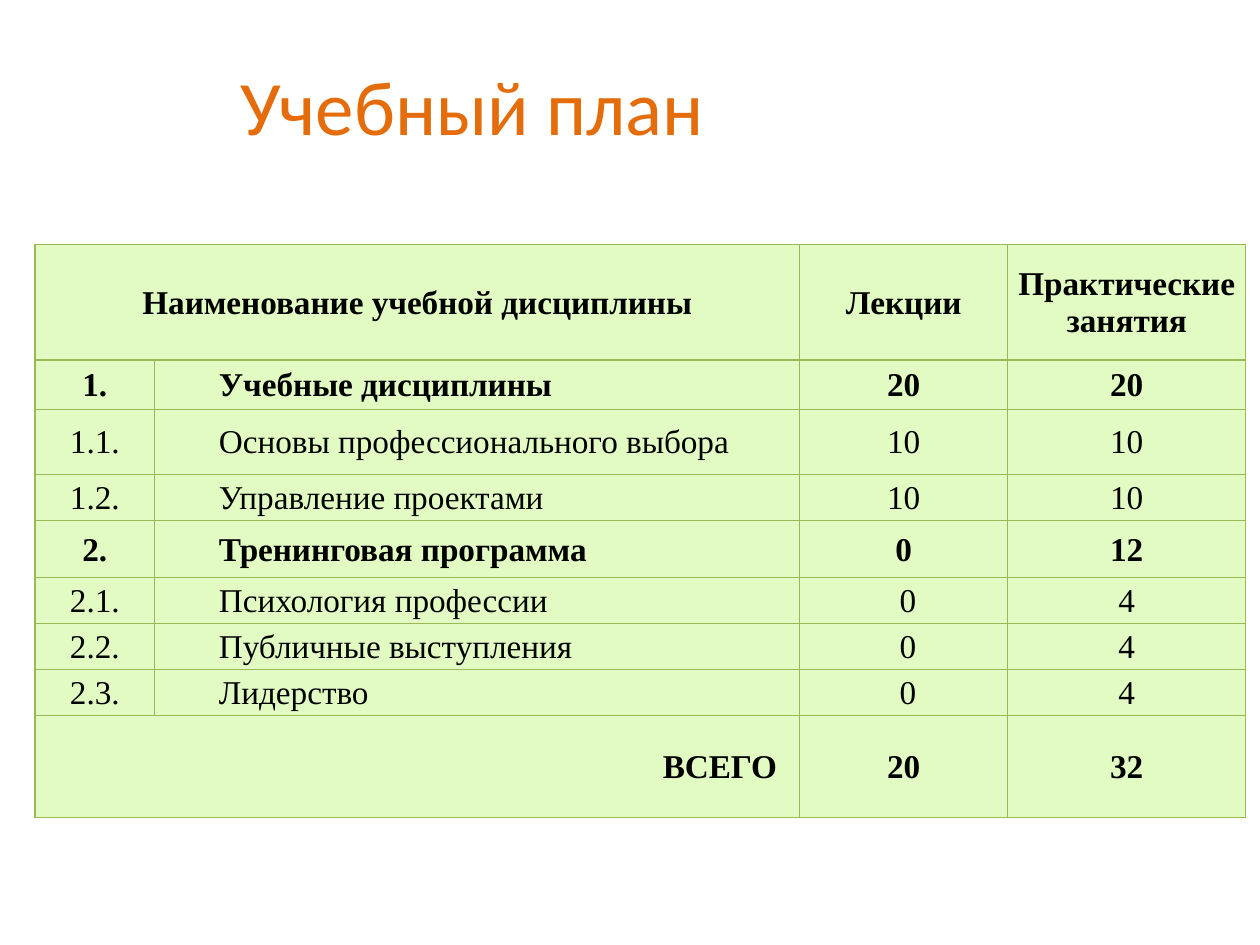
from dataclasses import dataclass

from lxml import etree
from pptx import Presentation
from pptx.dml.color import RGBColor
from pptx.enum.text import MSO_ANCHOR, PP_ALIGN
from pptx.oxml.ns import qn
from pptx.table import _Cell
from pptx.util import Pt

CENTER, LEFT, RIGHT = PP_ALIGN.CENTER, PP_ALIGN.LEFT, PP_ALIGN.RIGHT
MIDDLE = MSO_ANCHOR.MIDDLE

ORANGE = RGBColor(0xE4, 0x6C, 0x0A)
BLACK = RGBColor(0x00, 0x00, 0x00)
PALE_GREEN = RGBColor(0xE2, 0xFB, 0xC3)
BORDER_GREEN = RGBColor(0x98, 0xB9, 0x55)

COLUMN_WIDTHS = (68.4, 368.6, 118.8, 136.1)
NAME_INDENT = 36
TOTAL_RIGHT_MARGIN = 13
CELL_FORMAT = {
    "vertical_anchor": MIDDLE,
    "margin_left": Pt(0.7),
    "margin_top": Pt(0.7),
    "margin_right": Pt(0.7),
    "margin_bottom": Pt(0),
}


@dataclass(frozen=True)
class PlanRow:
    """A row without a name spans its label over the first two columns."""
    height: float
    label: str
    name: str
    lectures: str
    practice: str
    bold: bool = False
    label_alignment: PP_ALIGN = CENTER


PLAN = (
    PlanRow(66, "Наименование учебной дисциплины", "", "Лекции",
            "Практические занятия", bold=True),
    PlanRow(28.4, "1.", "Учебные дисциплины", "20", "20", bold=True),
    PlanRow(37.2, "1.1.", "Основы профессионального выбора", "10", "10"),
    PlanRow(26.2, "1.2.", "Управление проектами", "10", "10"),
    PlanRow(32.8, "2.", "Тренинговая программа", "0", "12", bold=True),
    PlanRow(26.2, "2.1.", "Психология профессии", " 0", "4"),
    PlanRow(26.2, "2.2.", "Публичные выступления", " 0", "4"),
    PlanRow(26.2, "2.3.", "Лидерство", " 0", "4"),
    PlanRow(58.3, "ВСЕГО", "", "20", "32", bold=True, label_alignment=RIGHT),
)


def apply_format(target: object, values: dict) -> None:
    for attribute, value in values.items():
        setattr(target, attribute, value)


def add_borders(cell: _Cell) -> None:
    """Outline the cell; border elements must precede the fill."""
    properties = cell._tc.get_or_add_tcPr()
    for position, side in enumerate(("a:lnL", "a:lnR", "a:lnT", "a:lnB")):
        line = etree.Element(qn(side), w=str(Pt(0.75)))
        fill = etree.SubElement(line, qn("a:solidFill"))
        etree.SubElement(fill, qn("a:srgbClr"), val=str(BORDER_GREEN))
        properties.insert(position, line)


def style_cell(cell: _Cell) -> None:
    apply_format(cell, CELL_FORMAT)
    cell.fill.solid()
    cell.fill.fore_color.rgb = PALE_GREEN
    add_borders(cell)


def write_cell(cell: _Cell, text: str, bold: bool, alignment: PP_ALIGN) -> None:
    paragraph = cell.text_frame.paragraphs[0]
    paragraph.alignment = alignment
    run = paragraph.add_run()
    run.text = text
    apply_format(run.font, {"name": "Times New Roman", "size": Pt(19), "bold": bold})
    run.font.color.rgb = BLACK


def add_title(slide) -> None:
    title = slide.shapes.title
    apply_format(title, {"left": Pt(42.5), "top": Pt(15),
                         "width": Pt(455), "height": Pt(90)})
    title.text_frame.text = "Учебный план"
    title.text_frame.vertical_anchor = MIDDLE
    paragraph = title.text_frame.paragraphs[0]
    paragraph.alignment = CENTER
    apply_format(paragraph.runs[0].font, {"name": "Calibri", "size": Pt(44)})
    paragraph.runs[0].font.color.rgb = ORANGE


def add_plan_table(slide) -> None:
    table = slide.shapes.add_table(
        len(PLAN), len(COLUMN_WIDTHS), Pt(20), Pt(139.7),
        Pt(sum(COLUMN_WIDTHS)), Pt(sum(row.height for row in PLAN))).table
    apply_format(table, {"first_row": False, "horz_banding": False})
    for column, width in zip(table.columns, COLUMN_WIDTHS):
        column.width = Pt(width)

    for index, row in enumerate(PLAN):
        table.rows[index].height = Pt(row.height)
        cells = [table.cell(index, column) for column in range(len(COLUMN_WIDTHS))]
        for cell in cells:
            style_cell(cell)
        label, name, lectures, practice = cells
        if row.name:
            write_cell(name, row.name, row.bold, LEFT)
            properties = name.text_frame.paragraphs[0]._p.get_or_add_pPr()
            properties.set("marL", "0")
            properties.set("indent", str(Pt(NAME_INDENT)))
        else:
            label.merge(name)
        if row.label_alignment == RIGHT:
            label.margin_right = Pt(TOTAL_RIGHT_MARGIN)
        write_cell(label, row.label, row.bold, row.label_alignment)
        write_cell(lectures, row.lectures, row.bold, CENTER)
        write_cell(practice, row.practice, row.bold, CENTER)


def main() -> None:
    presentation = Presentation()
    presentation.slide_width = Pt(720)
    presentation.slide_height = Pt(540)
    slide = presentation.slides.add_slide(presentation.slide_layouts[5])
    add_title(slide)
    add_plan_table(slide)
    presentation.save("out.pptx")


if __name__ == "__main__":
    main()
